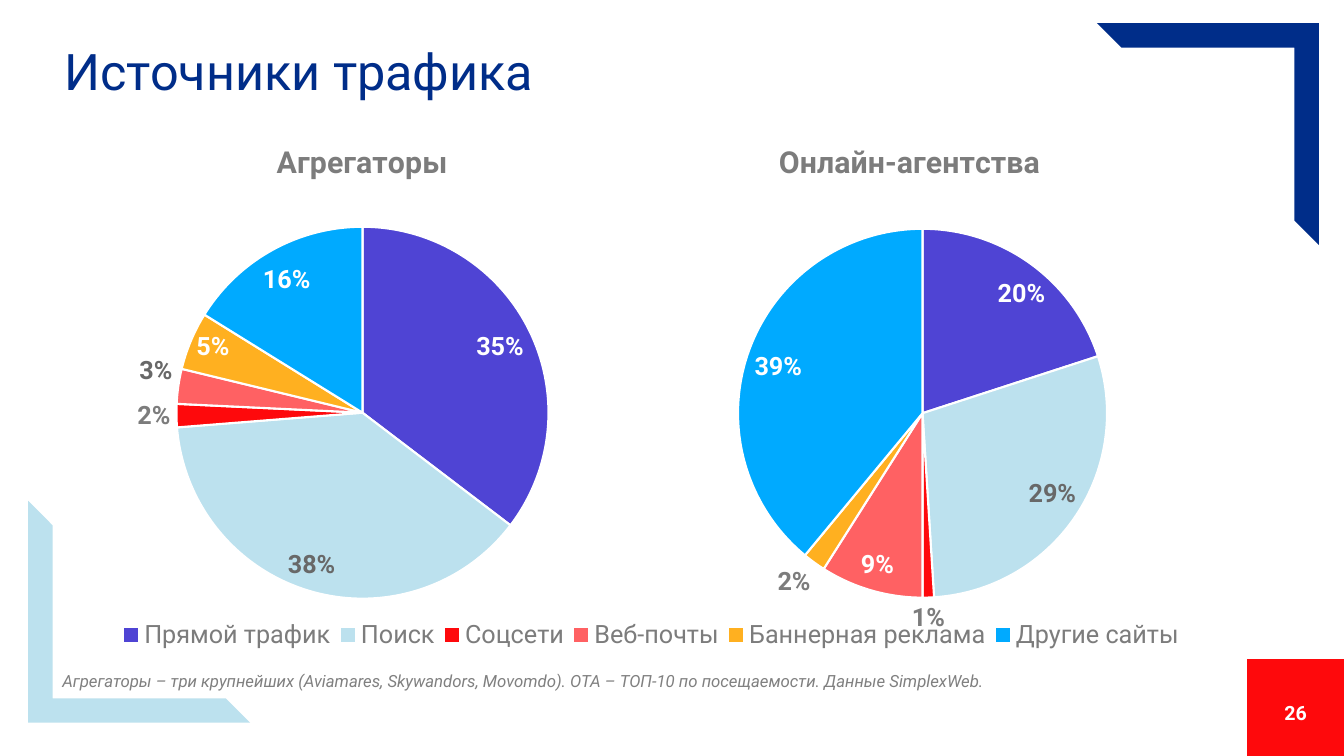
"""Build the traffic sources slide with two pie charts."""
import pptx
import pptx.chart.data
import pptx.dml.color
import pptx.enum.chart
import pptx.enum.shapes
import pptx.enum.text
import pptx.oxml
import pptx.oxml.ns
import pptx.util

Inches = pptx.util.Inches
Pt = pptx.util.Pt
RGBColor = pptx.dml.color.RGBColor
Shape = pptx.enum.shapes.MSO_SHAPE
Align = pptx.enum.text.PP_ALIGN
Anchor = pptx.enum.text.MSO_ANCHOR
Place = pptx.enum.chart.XL_LABEL_POSITION

FONT = "Roboto"
NAVY = RGBColor(0x00, 0x2D, 0x89)
PALE = RGBColor(0xBC, 0xE1, 0xEE)
RED = RGBColor(0xFE, 0x09, 0x0C)
VIOLET = RGBColor(0x4F, 0x44, 0xD4)
CORAL = RGBColor(0xFF, 0x61, 0x63)
AMBER = RGBColor(0xFF, 0xB0, 0x20)
BLUE = RGBColor(0x00, 0xAA, 0xFF)
WHITE = RGBColor(0xFF, 0xFF, 0xFF)
DARK = RGBColor(0x36, 0x36, 0x36)
SLATE = RGBColor(0x68, 0x68, 0x68)
GREY = RGBColor(0x7C, 0x7C, 0x7C)
ASH = RGBColor(0x80, 0x80, 0x80)
SLICES = [VIOLET, PALE, RED, CORAL, AMBER, BLUE]
SOURCES = ["Прямой трафик", "Поиск", "Соцсети", "Веб-почты",
           "Баннерная реклама", "Другие сайты"]


def style(font, size, color, bold=False, italic=False):
    """Set the face, size and colour of a font."""
    font.name = FONT
    font.size = Pt(size)
    font.bold = bold
    font.italic = italic
    font.color.rgb = color


def lengths(box):
    """Turn a box of numbers into lengths."""
    return [Inches(value) for value in box]


def add_block(slide, kind, box, color):
    """Add a filled shape without line or shadow."""
    block = slide.shapes.add_shape(kind, *lengths(box))
    block.shadow.inherit = False
    block.fill.solid()
    block.fill.fore_color.rgb = color
    block.line.fill.background()
    return block


def add_corner(slide, box, color, turn=0):
    """Add a flipped half frame."""
    corner = add_block(slide, Shape.HALF_FRAME, box, color)
    corner.adjustments[0] = 0.11
    corner.adjustments[1] = 0.11
    corner.rotation = turn
    corner._element.spPr.xfrm.set("flipV", "1")


def add_title(slide, text):
    """Fill and move the title placeholder."""
    title = slide.shapes.title
    title.left, title.top, title.width, title.height = lengths((0.54, 0.15, 11.5, 1.18))
    frame = title.text_frame
    frame.text = text
    frame.vertical_anchor = Anchor.MIDDLE
    line = frame.paragraphs[0]
    line.alignment = Align.LEFT
    line.line_spacing = 0.9
    style(line.runs[0].font, 36, NAVY)


def add_text(slide, box, text, align=Align.LEFT, anchor=Anchor.TOP, **look):
    """Add a wrapped text box of one line."""
    frame = slide.shapes.add_textbox(*lengths(box)).text_frame
    frame.word_wrap = True
    frame.text = text
    frame.vertical_anchor = anchor
    line = frame.paragraphs[0]
    line.alignment = align
    style(line.runs[0].font, **look)


def set_layout(parent, index, parts, head=""):
    """Give a chart part a fixed place, as shares of the chart."""
    for old in parent.findall(pptx.oxml.ns.qn("c:layout")):
        parent.remove(old)
    values = "".join(f'<c:{name} val="{part}"/>' for name, part in zip("xywh", parts))
    space = pptx.oxml.ns.nsdecls("c")
    parent.insert(index, pptx.oxml.parse_xml(
        f"<c:layout {space}><c:manualLayout>{head}{values}"
        "</c:manualLayout></c:layout>"))


def pin(parent, index, box, spot, head=""):
    """Pin a chart part to a spot on the slide."""
    left, top, width, height = box
    shares = [(spot[0] - left) / width, (spot[1] - top) / height]
    shares += [part / full for part, full in zip(spot[2:], (width, height))]
    head += '<c:xMode val="edge"/><c:yMode val="edge"/>'
    set_layout(parent, index, shares, head)


def set_labels(plot, inner, outer, shifts):
    """Format the labels, white inside and grey outside the pie."""
    plot.has_data_labels = True
    labels = plot.data_labels
    labels.show_value = True
    labels.show_percentage = False
    labels.number_format = "0%"
    labels.number_format_is_linked = False
    labels.position = Place.INSIDE_END
    style(labels.font, 18, SLATE, bold=True)
    points = plot.series[0].points
    for index in range(len(SOURCES)):
        label = points[index].data_label
        color = WHITE if index in inner else outer.get(index, SLATE)
        style(label.font, 18, color, bold=True)
        label.position = Place.OUTSIDE_END if index in outer else Place.INSIDE_END
    for node in plot.series[0]._element.dLbls.dLbl_lst:
        if node.idx_val in shifts:
            set_layout(node, 1, shifts[node.idx_val])


def add_pie(slide, box, name, values, area, head, inner, outer, shifts, legend=None):
    """Add a pie chart with its own title and labels."""
    data = pptx.chart.data.CategoryChartData(number_format="0%")
    data.categories = SOURCES
    data.add_series(name, values)
    chart = slide.shapes.add_chart(
        pptx.enum.chart.XL_CHART_TYPE.PIE, *lengths(box), data).chart
    style(chart.font, 18, DARK)
    chart.has_title = True
    title = chart.chart_title
    title.text_frame.text = name
    style(title.text_frame.paragraphs[0].runs[0].font, 21.6, GREY, bold=True)
    pin(title._element, 1, box, head)
    pin(chart._chartSpace.chart.plotArea, 0, box, area, '<c:layoutTarget val="inner"/>')
    chart.has_legend = legend is not None
    if legend:
        chart.legend.position = pptx.enum.chart.XL_LEGEND_POSITION.BOTTOM
        chart.legend.include_in_layout = False
        style(chart.legend.font, 18, GREY)
        pin(chart.legend._element, 1, box, legend)
    plot = chart.plots[0]
    plot.vary_by_categories = True
    for index, color in enumerate(SLICES):
        look = plot.series[0].points[index].format
        look.fill.solid()
        look.fill.fore_color.rgb = color
        look.line.color.rgb = WHITE
        look.line.width = Pt(1.5)
    set_labels(plot, inner, outer, shifts)


def main():
    """Build and save the slide."""
    deck = pptx.Presentation()
    deck.slide_width = Inches(13.33)
    deck.slide_height = Inches(7.5)
    slide = deck.slides.add_slide(deck.slide_layouts[5])
    add_block(slide, Shape.RECTANGLE, (12.37, 6.54, 0.96, 0.96), RED)
    add_corner(slide, (0.28, 4.97, 2.2, 2.2), PALE)
    add_corner(slide, (10.88, 0.23, 2.2, 2.2), NAVY, turn=180)
    add_title(slide, "Источники трафика")
    add_pie(slide, (0.54, 1.35, 11.84, 5.18), "Агрегаторы",
            [0.35, 0.38, 0.02, 0.03, 0.05, 0.16],
            area=(1.75, 2.25, 3.69, 3.69), head=(2.69, 1.35),
            inner={0, 4, 5}, outer={2: GREY, 3: SLATE},
            shifts={1: (-0.02, -0.01), 4: (0, -0.02), 5: (-0.01, 0.02)},
            legend=(1.13, 6.08, 10.66, 0.44))
    add_text(slide, (12.37, 6.87, 0.96, 0.4), "26", Align.CENTER, Anchor.MIDDLE,
             size=14, color=WHITE, bold=True)
    add_pie(slide, (6.14, 1.35, 5.87, 5.18), "Онлайн-агентства",
            [0.2, 0.29, 0.01, 0.09, 0.02, 0.39],
            area=(7.32, 2.27, 3.66, 3.66), head=(7.67, 1.35),
            inner={0, 3, 5}, outer={2: GREY, 4: GREY},
            shifts={0: (0.03, 0.02), 1: (0.01, -0.01), 3: (-0.02, -0.01)})
    add_text(slide, (0.52, 6.61, 11.6, 0.3),
             "Агрегаторы – три крупнейших (Aviamares, Skywandors, Movomdo). "
             "OTA – ТОП-10 по посещаемости. Данные SimplexWeb.",
             size=12, color=ASH, italic=True)
    deck.save("out.pptx")


if __name__ == "__main__":
    main()
